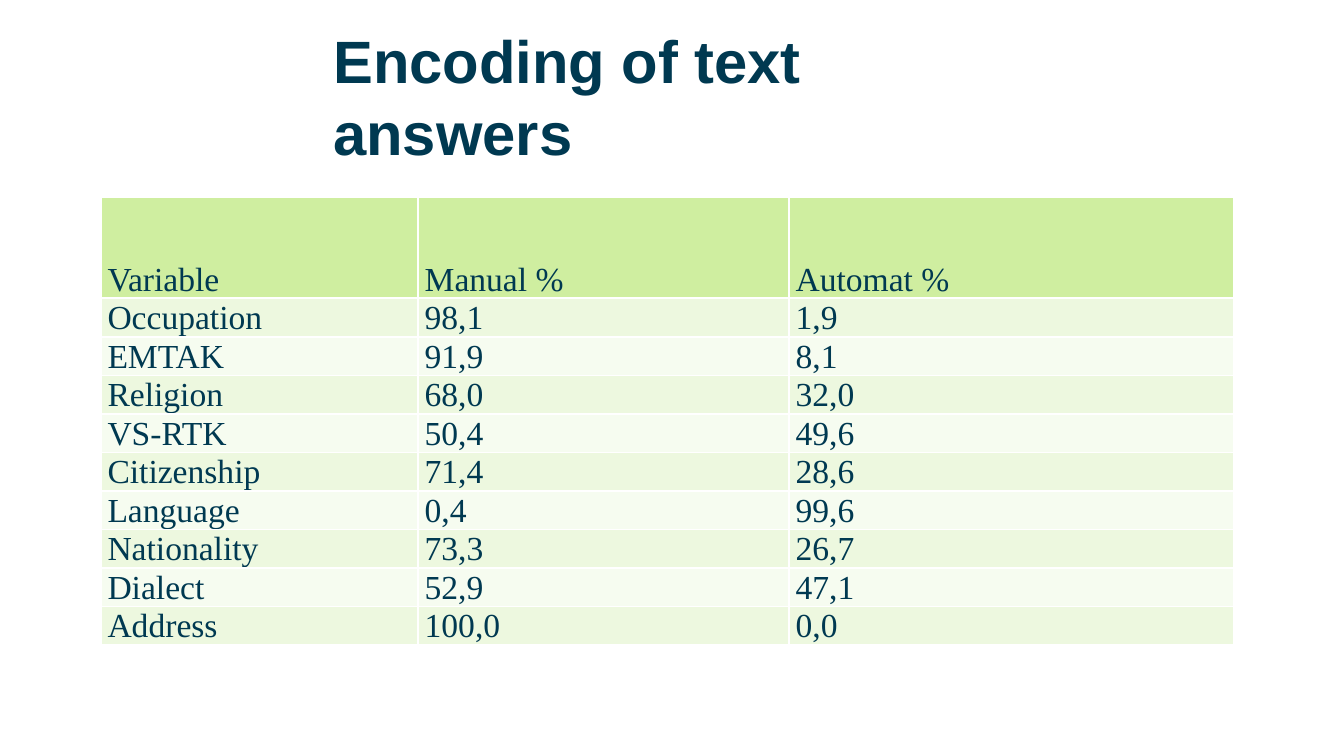
from pptx import Presentation
from pptx import util as u
from pptx.dml.color import RGBColor
from pptx.enum import text
from pptx.oxml.ns import qn
from lxml import etree


def color(value):
    return RGBColor.from_string(value)


def write(frame, content, *, font, size, ink, bold=False,
          align=text.PP_ALIGN.LEFT, spacing=1.0):
    frame.word_wrap = True
    paragraph = frame.paragraphs[0]
    paragraph.alignment = align
    paragraph.line_spacing = spacing
    run = paragraph.add_run()
    run.text = content
    run.font.name = font
    run.font.size = u.Pt(size)
    run.font.bold = bold
    run.font.color.rgb = color(ink)


class Deck:
    ink = "003951"
    header_fill = "CFEEA0"
    band_fills = ("EDF8DF", "F6FCF0")
    border = "FFFFFF"

    def __init__(self, width, height):
        self.presentation = Presentation()
        self.presentation.slide_width = u.Inches(width)
        self.presentation.slide_height = u.Inches(height)
        self.slide = self.presentation.slides.add_slide(
            self.presentation.slide_layouts[6])

    def across(self, percent):
        return u.Emu(round(self.presentation.slide_width * percent / 100))

    def down(self, percent):
        return u.Emu(round(self.presentation.slide_height * percent / 100))

    def title(self, content, left, top, width, height):
        shape = self.slide.shapes.add_textbox(
            self.across(left), self.down(top),
            self.across(width), self.down(height))
        frame = shape.text_frame
        frame.margin_left = frame.margin_right = 0
        frame.margin_top = frame.margin_bottom = 0
        frame.vertical_anchor = text.MSO_ANCHOR.MIDDLE
        write(frame, content, font="Arial", size=32, ink=self.ink, bold=True)

    def table(self, rows, left, top, widths, header_height, row_height):
        heights = [header_height] + [row_height] * (len(rows) - 1)
        table = self.slide.shapes.add_table(
            len(rows), len(widths), self.across(left), self.down(top),
            self.across(sum(widths)), self.down(sum(heights))).table
        for column, width in zip(table.columns, widths):
            column.width = self.across(width)
        for index, (values, height) in enumerate(zip(rows, heights)):
            table.rows[index].height = self.down(height)
            fill = self.band_fills[(index - 1) % 2] if index else self.header_fill
            for column, value in enumerate(values):
                self.cell(table.cell(index, column), value, fill)

    def cell(self, cell, value, fill):
        cell.margin_left = cell.margin_right = u.Inches(0.05)
        cell.margin_top = cell.margin_bottom = 0
        cell.vertical_anchor = text.MSO_ANCHOR.BOTTOM
        write(cell.text_frame, value, font="Times New Roman", size=18,
              ink=self.ink, align=text.PP_ALIGN.JUSTIFY, spacing=0.95)
        properties = cell._tc.get_or_add_tcPr()
        for side in ("a:lnL", "a:lnR", "a:lnT", "a:lnB"):
            line = etree.SubElement(properties, qn(side), w=str(u.Pt(1)))
            solid = etree.SubElement(line, qn("a:solidFill"))
            etree.SubElement(solid, qn("a:srgbClr"), val=self.border)
        cell.fill.solid()
        cell.fill.fore_color.rgb = color(fill)


def main():
    rows = [
        ("Variable", "Manual %", "Automat %"),
        ("Occupation", "98,1", "1,9"),
        ("EMTAK", "91,9", "8,1"),
        ("Religion", "68,0", "32,0"),
        ("VS-RTK", "50,4", "49,6"),
        ("Citizenship", "71,4", "28,6"),
        ("Language", "0,4", "99,6"),
        ("Nationality", "73,3", "26,7"),
        ("Dialect", "52,9", "47,1"),
        ("Address", "100,0", "0,0"),
    ]
    deck = Deck(10, 10 * 9 / 16)
    deck.title("Encoding of text answers", 24.8, 3.8, 48, 17.78)
    deck.table(rows, left=7.5, top=26.13, widths=(23.6, 27.6, 33.1),
               header_height=13.33, row_height=5.1)
    deck.presentation.save("out.pptx")


if __name__ == "__main__":
    main()
